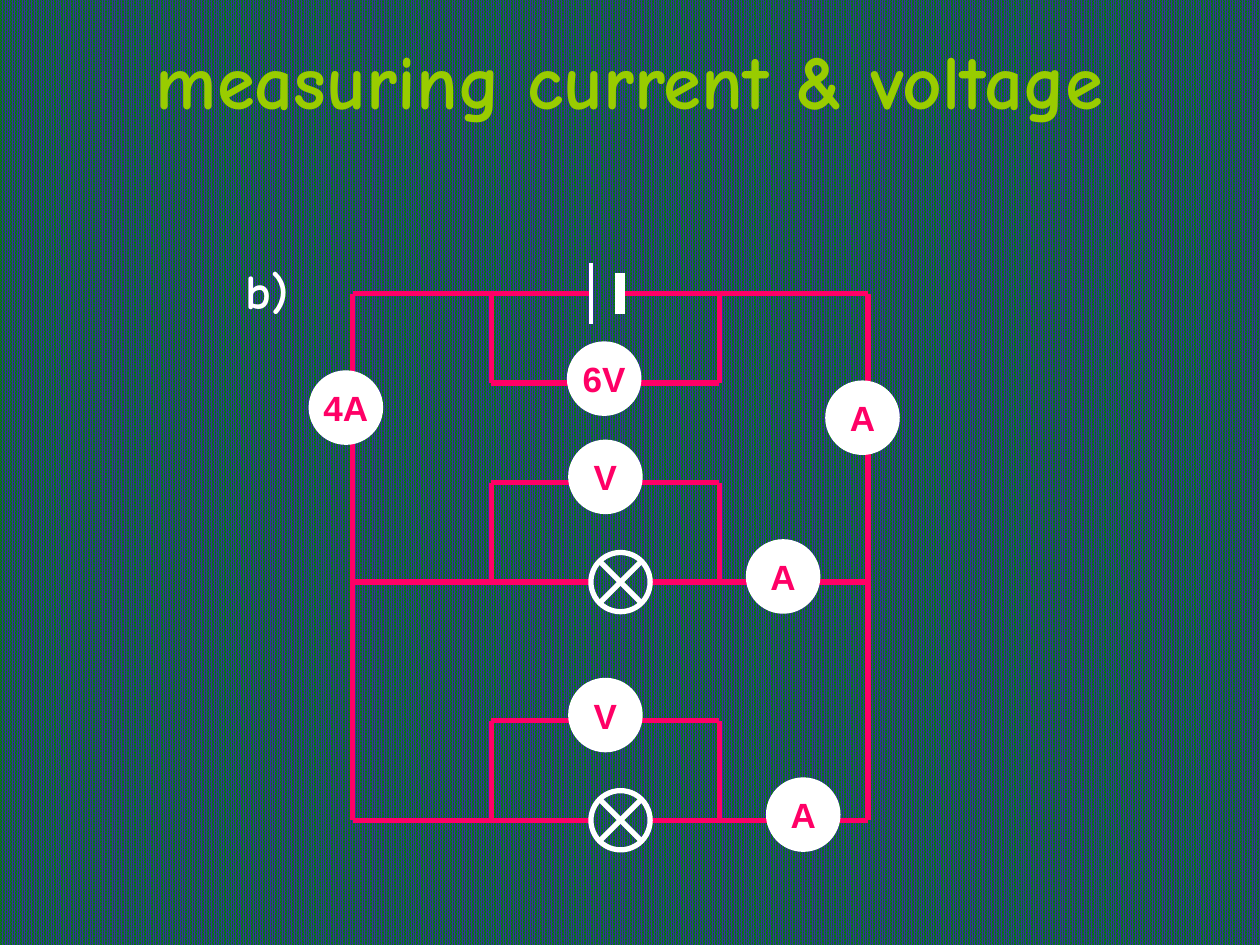
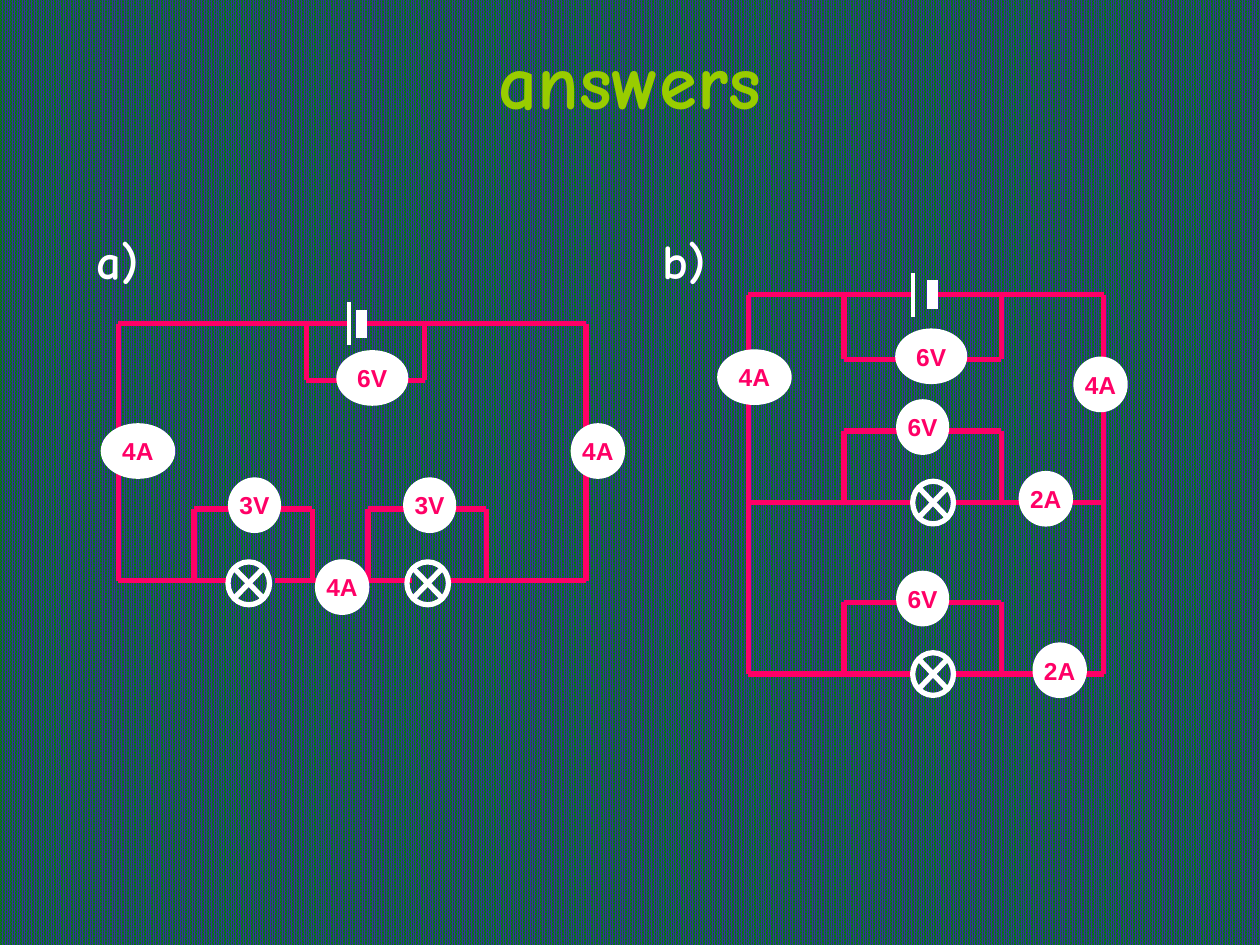
from dataclasses import dataclass
from typing import Any

from lxml import etree
from pptx import Presentation
from pptx.dml import color
from pptx.enum import dml, shapes, text
from pptx.oxml import ns
from pptx.util import Inches, Pt

WIRE, WHITE, TITLE = "FF0066", "FFFFFF", "99CC00"
STRIPE, GROUND = "333399", "008000"
HAND, PLAIN = "Comic Neue", "Arial"


def rgb(code):
    return color.RGBColor.from_string(code)


def write(frame, content, font=HAND, size=28, ink=WHITE, align=text.PP_ALIGN.LEFT):
    paragraph = frame.paragraphs[0]
    paragraph.alignment = align
    run = paragraph.add_run()
    run.text = content
    run.font.name = font
    run.font.size = Pt(size)
    run.font.bold = True
    run.font.color.rgb = rgb(ink)


def caption(slide, left, top, width, height, content, **style):
    box = slide.shapes.add_textbox(*map(Inches, (left, top, width, height)))
    box.text_frame.word_wrap = True
    box.text_frame.auto_size = text.MSO_AUTO_SIZE.SHAPE_TO_FIT_TEXT
    write(box.text_frame, content, **style)


@dataclass
class Board:
    slide: Any
    left: float
    top: float
    x_scale: float
    y_scale: float
    reading_size: int
    insets: tuple

    def at(self, x, y):
        return Inches(self.left + x * self.x_scale), Inches(self.top + y * self.y_scale)

    def wire(self, x1, y1, x2, y2, ink=WIRE, weight=3):
        line = self.slide.shapes.add_connector(
            shapes.MSO_CONNECTOR.STRAIGHT, *self.at(x1, y1), *self.at(x2, y2))
        line.line.color.rgb = rgb(ink)
        line.line.width = Pt(weight)
        etree.SubElement(line._element.spPr, ns.qn("a:effectLst"))

    def cell(self, thin_x, thick_x, thin_half, thick_half):
        self.wire(thin_x, -thin_half, thin_x, thin_half, WHITE, 2.25)
        self.wire(thick_x, -thick_half, thick_x, thick_half, WHITE, 6)

    def loop(self, left, right, main_y, meter_y):
        self.wire(left, meter_y, right, meter_y)
        for x in (left, right):
            self.wire(x, main_y, x, meter_y)

    def symbol(self, kind, x, y, width, height):
        part = self.slide.shapes.add_shape(
            kind, *self.at(x, y), Inches(width), Inches(height))
        part.shadow.inherit = False
        part.line.color.rgb = rgb(WHITE)
        part.line.width = Pt(3)
        return part

    def lamp(self, x, y, width, height):
        bulb = self.symbol(shapes.MSO_SHAPE.FLOWCHART_SUMMING_JUNCTION, x, y,
                           width * self.x_scale, height * self.y_scale)
        bulb.fill.background()

    def meter(self, reading, x, y, width, height):
        dial = self.symbol(shapes.MSO_SHAPE.OVAL, x, y, width, height)
        dial.fill.solid()
        dial.fill.fore_color.rgb = rgb(WHITE)
        frame = dial.text_frame
        frame.word_wrap = False
        frame.vertical_anchor = text.MSO_ANCHOR.MIDDLE
        across, down = map(Inches, self.insets)
        frame.margin_left = frame.margin_right = across
        frame.margin_top = frame.margin_bottom = down
        write(frame, reading, font=PLAIN, size=self.reading_size, ink=WIRE,
              align=text.PP_ALIGN.CENTER)


def parallel_circuit(slide, left, top, width, height, readings, dial_widths,
                     dial_height, reading_size, insets):
    right, bottom = 4.09, 4.18
    board = Board(slide, left, top, width / right, height / bottom, reading_size, insets)
    lamp_x, lamp_size = 1.89, 0.47
    tap_left, tap_right = 1.1, 2.91

    board.wire(0, 0, lamp_x, 0)
    board.wire(2.12, 0, right, 0)
    for x in (0, right):
        board.wire(x, 0, x, bottom)
    board.loop(tap_left, tap_right, 0, 0.71)
    for branch_y in (2.29, bottom):
        board.wire(0, branch_y, lamp_x, branch_y)
        board.wire(lamp_x + lamp_size, branch_y, right, branch_y)
        board.loop(tap_left, tap_right, branch_y, branch_y - 0.79)
        board.lamp(lamp_x, branch_y - lamp_size / 2, lamp_size, lamp_size)
    board.cell(lamp_x, 2.12, 0.24, 0.16)

    corners = [(1.72, 0.4), (1.73, 1.18), (1.73, 3.07),
               (-0.33, 0.63), (3.77, 0.71), (3.14, 1.97), (3.3, 3.86)]
    for reading, (x, y), dial_width in zip(readings, corners, dial_widths):
        board.meter(reading, x, y, dial_width, dial_height)


def series_circuit(slide, left, top, width, height):
    right, bottom = 3.71, 2.04
    board = Board(slide, left, top, width / right, height / bottom, 14, (0.07, 0.04))

    board.wire(0, 0, 1.83, 0)
    board.wire(1.93, 0, right, 0)
    for x in (0, right):
        board.wire(x, 0, x, bottom)
    for start, end in ((0, 0.87), (1.24, 2.33), (2.63, right)):
        board.wire(start, bottom, end, bottom)
    board.cell(1.83, 1.93, 0.17, 0.11)
    board.loop(1.49, 2.43, 0, 0.45)
    for tap, lamp_x, dial_x in ((0.6, 0.87, 0.89), (1.98, 2.29, 2.28)):
        board.loop(tap, tap + 0.94, bottom, 1.47)
        board.meter("3V", dial_x, 1.24, 0.38, 0.4)
        board.lamp(lamp_x, 1.89, 0.33, 0.34)
    for reading, x, y, dial_width in (("6V", 1.75, 0.23, 0.53), ("4A", -0.12, 0.81, 0.55),
                                      ("4A", 3.61, 0.81, 0.39), ("4A", 1.58, 1.89, 0.39)):
        board.meter(reading, x, y, dial_width, 0.4)


def circuit_slide(deck, heading):
    slide = deck.slides.add_slide(deck.slide_layouts[6])
    fill = slide.background.fill
    fill.patterned()
    fill.pattern = dml.MSO_PATTERN.PERCENT_90
    fill.fore_color.rgb = rgb(STRIPE)
    fill.back_color.rgb = rgb(GROUND)
    caption(slide, 0, 0.21, 10, 0.83, heading, size=44, ink=TITLE,
            align=text.PP_ALIGN.CENTER)
    return slide


def main():
    deck = Presentation()
    deck.slide_width, deck.slide_height = Inches(10), Inches(7.5)

    question = circuit_slide(deck, "measuring current & voltage")
    parallel_circuit(question, 2.8, 2.33, 4.09, 4.18,
                     ["6V", "V", "V", "4A", "A", "A", "A"], [0.55] * 7, 0.55, 20, (0.1, 0.05))
    caption(question, 1.85, 2.02, 0.71, 0.57, "b)")

    answers = circuit_slide(deck, "answers")
    series_circuit(answers, 0.94, 2.57, 3.71, 2.04)
    parallel_circuit(answers, 5.94, 2.34, 2.82, 3.01,
                     ["6V", "6V", "6V", "4A", "4A", "2A", "2A"],
                     [0.53, 0.38, 0.38, 0.55, 0.39, 0.39, 0.39], 0.4, 14, (0.07, 0.04))
    for left, label in ((0.67, "a)"), (5.16, "b)")):
        caption(answers, left, 1.78, 0.71, 0.57, label)

    deck.save("out.pptx")


if __name__ == "__main__":
    main()
